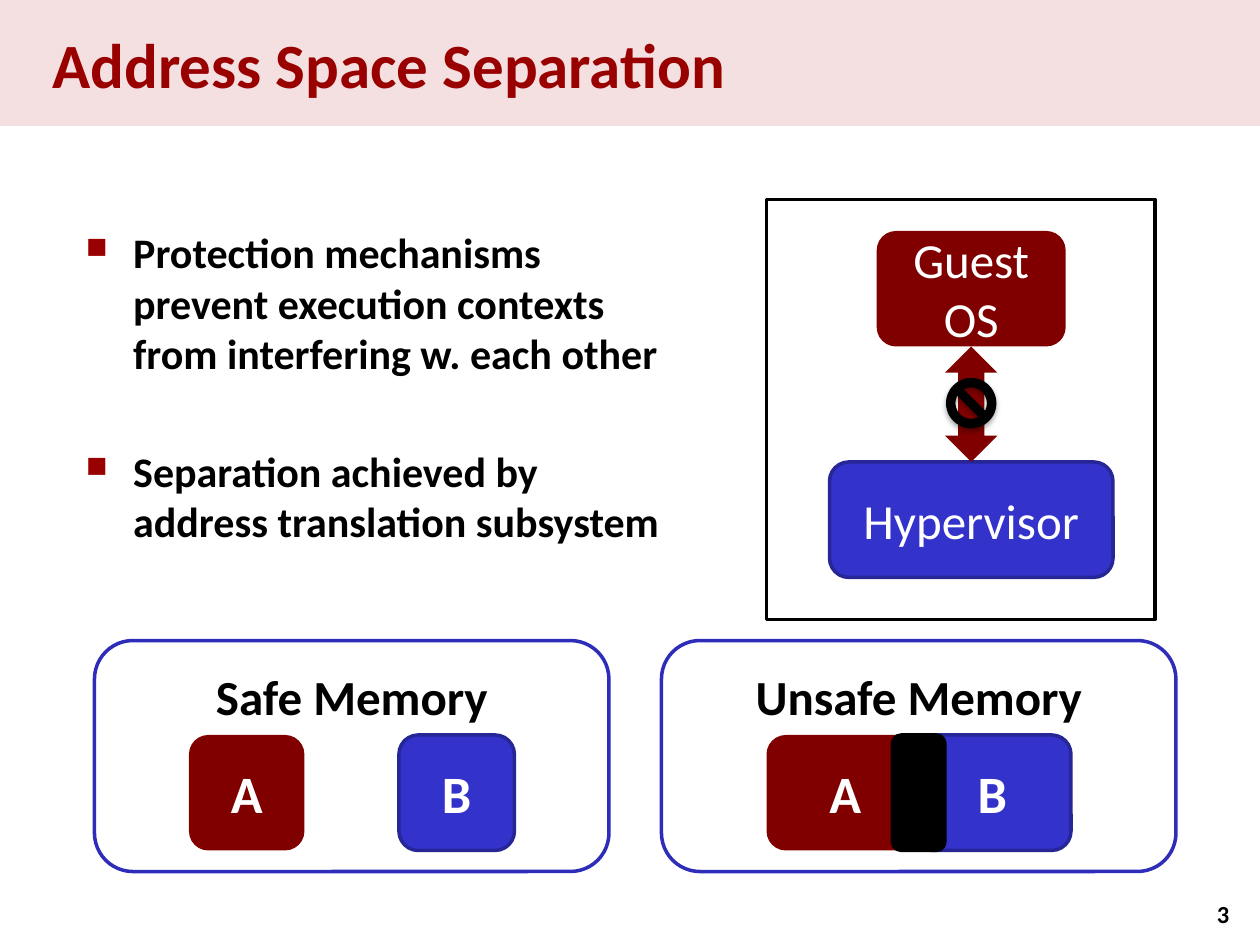
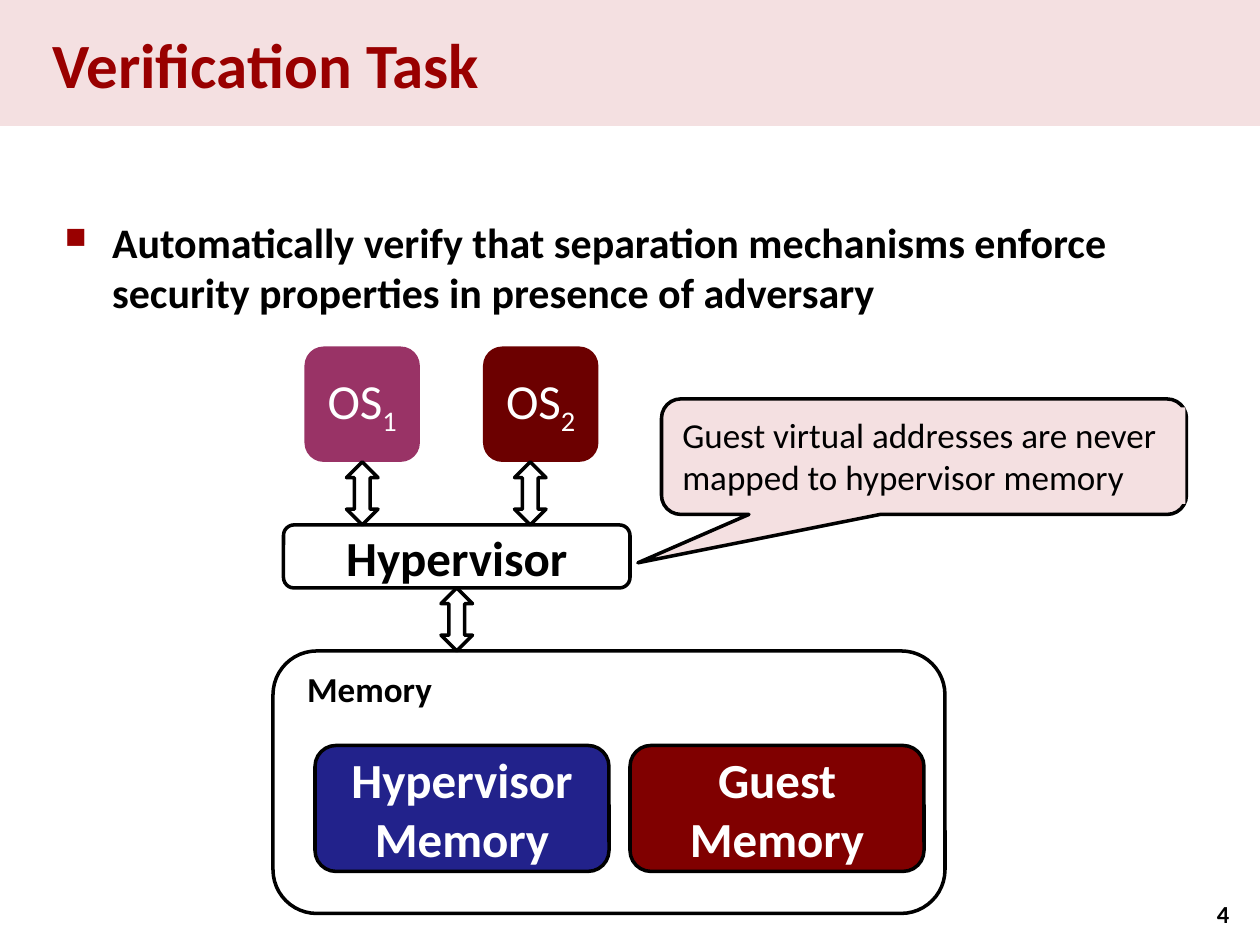
from lxml.etree import SubElement
from pptx import Presentation
from pptx.dml.color import RGBColor
from pptx.enum.shapes import MSO_SHAPE
from pptx.enum.text import MSO_ANCHOR, MSO_AUTO_SIZE, PP_ALIGN
from pptx.oxml.ns import qn
from pptx.util import Emu, Pt

PX = 7620  # 120 px to the inch
FONT = "Calibri"
COLORS = {
    "band": "F4E0E1", "title": "990000", "guest": "800000", "os1": "993366",
    "os2": "6C0000", "hypervisor": "3333CC", "hypervisor_edge": "262697",
    "panel_edge": "2D2DB9", "hypervisor_memory": "22228B",
    "black": "000000", "white": "FFFFFF",
}
TITLE_FORMAT = {"size": 36, "bold": True, "color": "title"}
BODY_FORMAT = {"size": 24, "bold": True}
NUMBER_FORMAT = {"size": 14, "bold": True}
NODE_FORMAT = {"size": 28, "color": "white"}
LETTER_FORMAT = {"size": 30, "bold": True, "color": "white"}
HEADING_FORMAT = {"size": 28, "bold": True}
NOTE_FORMAT = {"size": 20}
HYPERVISOR_STYLE = {"fill": "hypervisor", "edge": "hypervisor_edge"}
OUTLINE_STYLE = {"fill": None, "edge": "black"}


def px(length):
    return Emu(length * PX)


def rgb(name):
    return RGBColor.from_string(COLORS[name])


# Shared helpers
def format_font(font, size, bold=False, color="black"):
    for attribute, value in {"name": FONT, "size": Pt(size), "bold": bold}.items():
        setattr(font, attribute, value)
    font.color.rgb = rgb(color)


def write(frame, text, style, align=PP_ALIGN.CENTER, anchor=MSO_ANCHOR.MIDDLE, wrap=True):
    settings = {"auto_size": MSO_AUTO_SIZE.NONE, "vertical_anchor": anchor, "word_wrap": wrap}
    for attribute, value in settings.items():
        setattr(frame, attribute, value)
    paragraph = frame.paragraphs[0]
    paragraph.text = text
    paragraph.alignment = align
    for run in paragraph.runs:
        format_font(run.font, **style)
    return paragraph


def place(shape, left, top, width, height):
    for attribute, length in zip(("left", "top", "width", "height"), (left, top, width, height)):
        setattr(shape, attribute, px(length))


def draw(slide, kind, box, fill=None, edge=None):
    shape = slide.shapes.add_shape(kind, *map(px, box))
    shape.shadow.inherit = False
    if fill:
        shape.fill.solid()
        shape.fill.fore_color.rgb = rgb(fill)
    else:
        shape.fill.background()
    if edge:
        shape.line.color.rgb = rgb(edge)
        shape.line.width = Pt(2)
    else:
        shape.line.fill.background()
    return shape


def rounded(slide, box, text, style, fill, edge=None):
    shape = draw(slide, MSO_SHAPE.ROUNDED_RECTANGLE, box, fill, edge)
    return write(shape.text_frame, text, style)


def label(slide, box, text, style, **layout):
    textbox = slide.shapes.add_textbox(*map(px, box))
    return write(textbox.text_frame, text, style, anchor=MSO_ANCHOR.TOP, **layout)


def start_slide(prs, title, number):
    slide = prs.slides.add_slide(prs.slide_layouts[5])
    band = slide.shapes.title
    place(band, 0, 0, 1200, 120)
    band.fill.solid()
    band.fill.fore_color.rgb = rgb("band")
    write(band.text_frame, title, TITLE_FORMAT, PP_ALIGN.LEFT)
    band.text_frame.margin_left = px(50)
    label(slide, (1130, 850, 70, 41), str(number), NUMBER_FORMAT)
    return slide


def bullet_list(slide, box, items, gap=38.4):
    frame = slide.shapes.add_textbox(*map(px, box)).text_frame
    frame.word_wrap = True
    for index, item in enumerate(items):
        paragraph = frame.add_paragraph() if index else frame.paragraphs[0]
        paragraph.text = item
        paragraph.space_before = Pt(gap if index else 4.8)
        format_font(paragraph.runs[0].font, **BODY_FORMAT)
        properties = paragraph._p.get_or_add_pPr()
        properties.set("marL", str(px(45)))
        properties.set("indent", str(px(-45)))
        bullet_color = SubElement(properties, qn("a:buClr"))
        SubElement(bullet_color, qn("a:srgbClr"), val=COLORS["title"])
        SubElement(properties, qn("a:buSzPct"), val="70000")
        SubElement(properties, qn("a:buChar"), char="■")


# Regions of the separation slide
def blocked_sign(slide, box):
    sign = draw(slide, MSO_SHAPE.NO_SYMBOL, box, "black")
    effects = sign._element.spPr.find(qn("a:effectLst"))
    shadow = SubElement(effects, qn("a:outerShdw"), blurRad=str(Pt(3.1)),
                        dist=str(Pt(1.8)), dir="5400000", rotWithShape="0")
    shade = SubElement(shadow, qn("a:srgbClr"), val=COLORS["black"])
    SubElement(shade, qn("a:alpha"), val="35000")


def isolation_diagram(slide, left, top, width, height):
    rounded(slide, (left + 105, top + 30, 180, 110), "Guest\nOS", NODE_FORMAT, "guest")
    rounded(slide, (left + 60, top + 250, 270, 110), "Hypervisor", NODE_FORMAT,
            **HYPERVISOR_STYLE)
    draw(slide, MSO_SHAPE.UP_DOWN_ARROW, (left + 170, top + 140, 50, 110), "guest")
    blocked_sign(slide, (left + 171, top + 170, 48, 48))
    draw(slide, MSO_SHAPE.RECTANGLE, (left, top, width, height), **OUTLINE_STYLE)


def memory_panel(slide, box, heading, a_offset, b_offset, block_width):
    left, top = box[:2]
    panel = draw(slide, MSO_SHAPE.ROUNDED_RECTANGLE, box, "white", "panel_edge")
    write(panel.text_frame, heading, HEADING_FORMAT, anchor=MSO_ANCHOR.TOP)
    panel.text_frame.margin_top = px(14)
    blocks = (("A", a_offset, {"fill": "guest"}), ("B", b_offset, HYPERVISOR_STYLE))
    for letter, offset, style in blocks:
        rounded(slide, (left + offset, top + 90, block_width, 110), letter,
                LETTER_FORMAT, **style)
    # Black strip where the two blocks collide
    if a_offset + block_width > b_offset:
        draw(slide, MSO_SHAPE.ROUNDED_RECTANGLE,
             (left + b_offset - 20, top + 90, 50, 110), "black", "black")


def separation_slide(prs):
    slide = start_slide(prs, "Address Space Separation", 3)
    bullet_list(slide, (70, 210, 580, 390), [
        "Protection mechanisms prevent execution contexts from interfering w. each other",
        "Separation achieved by address translation subsystem",
    ])
    isolation_diagram(slide, 730, 190, 370, 400)
    memory_panel(slide, (90, 610, 490, 220), "Safe Memory", 90, 290, 110)
    memory_panel(slide, (630, 610, 490, 220), "Unsafe Memory", 100, 240, 150)


# Regions of the verification slide
def memory_region(slide, left, top, width, height):
    draw(slide, MSO_SHAPE.ROUNDED_RECTANGLE, (left, top, width, height), **OUTLINE_STYLE)
    label(slide, (left + 20, top + 10, 144, 53), "Memory", {"size": 20, "bold": True}, wrap=False)
    halves = (("Hypervisor\nMemory", "hypervisor_memory"), ("Guest\nMemory", "guest"))
    for column, (name, fill) in enumerate(halves):
        rounded(slide, (left + 40 + 300 * column, top + 90, 280, 120), name,
                {**HEADING_FORMAT, "color": "white"}, fill, "black")


def system_stack(slide, left, top):
    guests = (("1", "os1", 20), ("2", "os2", 190))
    for index, fill, offset in guests:
        name = rounded(slide, (left + offset, top, 110, 110), "OS", NODE_FORMAT, fill)
        subscript = name.add_run()
        subscript.text = index
        format_font(subscript.font, **NODE_FORMAT)
        subscript._r.get_or_add_rPr().set("baseline", "-25000")
    rounded(slide, (left, top + 170, 330, 60), "Hypervisor", HEADING_FORMAT, "white", "black")
    for offset, drop in ((60, 110), (220, 110), (150, 230)):
        draw(slide, MSO_SHAPE.UP_DOWN_ARROW, (left + offset, top + drop, 30, 60), **OUTLINE_STYLE)


def property_callout(slide, left, top, width, height):
    callout = draw(slide, MSO_SHAPE.ROUNDED_RECTANGULAR_CALLOUT,
                   (left, top, width, height), "band", "black")
    for index, value in enumerate((-0.545, 0.919, 0.167)):
        callout.adjustments[index] = value
    note = draw(slide, MSO_SHAPE.RECTANGLE, (left + 8, top + 8, width - 9, height - 18), "band")
    write(note.text_frame, "Guest virtual addresses are never\nmapped to hypervisor memory",
          NOTE_FORMAT, PP_ALIGN.LEFT, MSO_ANCHOR.TOP)


def verification_slide(prs):
    slide = start_slide(prs, "Verification Task", 4)
    bullet_list(slide, (50, 200, 1090, 590), [
        "Automatically verify that separation mechanisms enforce "
        "security properties in presence of adversary",
    ])
    memory_region(slide, 260, 620, 640, 250)
    system_stack(slide, 270, 330)
    property_callout(slide, 630, 380, 500, 110)


def main():
    prs = Presentation()
    prs.slide_width, prs.slide_height = px(1200), px(900)
    separation_slide(prs)
    verification_slide(prs)
    prs.save("out.pptx")


if __name__ == "__main__":
    main()
